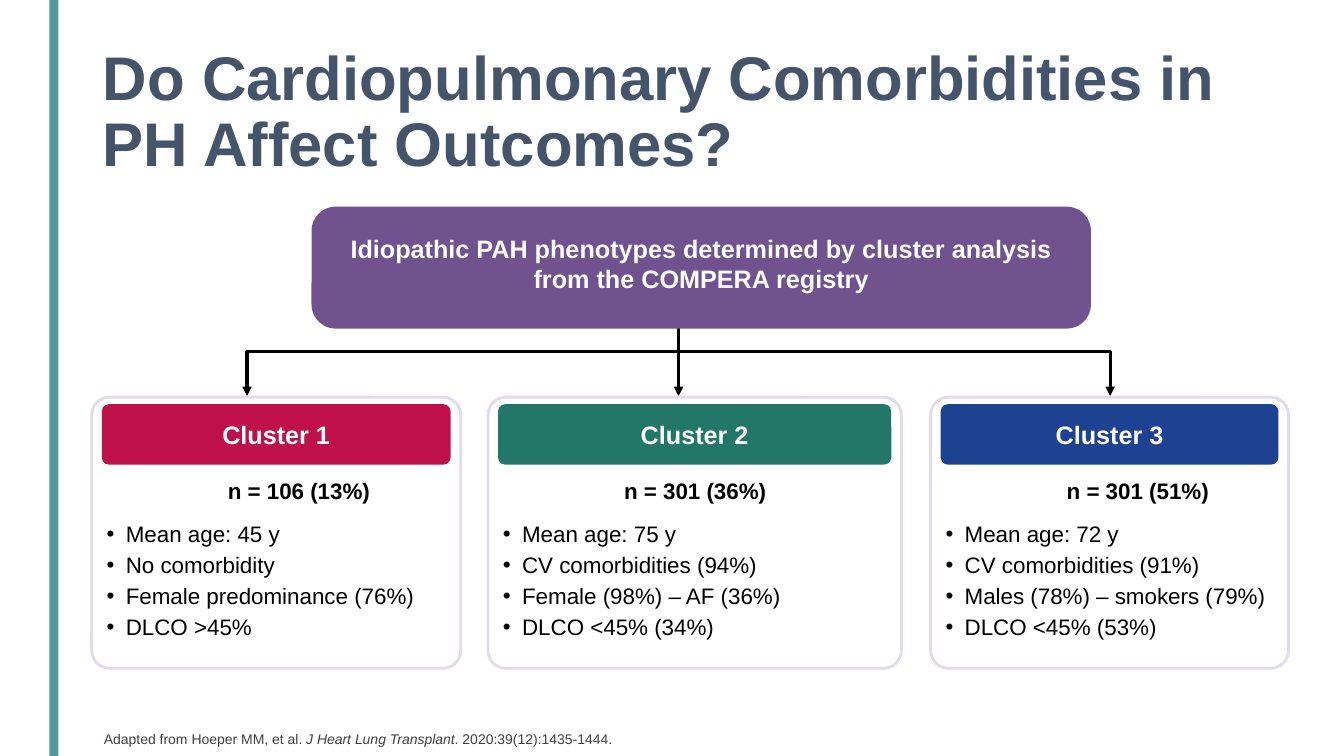
from lxml import etree
from pptx import Presentation
from pptx.dml.color import RGBColor
from pptx.enum.shapes import MSO_CONNECTOR, MSO_SHAPE
from pptx.enum.text import MSO_ANCHOR, MSO_AUTO_SIZE, PP_ALIGN
from pptx.oxml.ns import qn
from pptx.util import Inches, Pt

RECT, ROUND = MSO_SHAPE.RECTANGLE, MSO_SHAPE.ROUNDED_RECTANGLE
LINE, ELBOW = MSO_CONNECTOR.STRAIGHT, MSO_CONNECTOR.ELBOW
TOP, MIDDLE = MSO_ANCHOR.TOP, MSO_ANCHOR.MIDDLE
LEFT, CENTER = PP_ALIGN.LEFT, PP_ALIGN.CENTER

COLORS = {
    "bar": "549897", "title": "44546A", "note": "404040", "purple": "70528F",
    "red": "BF104B", "green": "227768", "blue": "1D4292",
    "edge": "E2DBEA", "white": "FFFFFF", "black": "000000",
}


def rgb(name):
    return RGBColor.from_string(COLORS[name])


def style(item, size, color, bold=False):
    font = item.font
    values = {"name": "Arial", "size": Pt(size), "bold": bold}
    for key, value in values.items():
        setattr(font, key, value)
    font.color.rgb = rgb(color)


deck = Presentation()
deck.slide_width, deck.slide_height = Inches(13.33), Inches(7.5)
slide = deck.slides.add_slide(deck.slide_layouts[1])
shapes = slide.shapes

# Title and source note
title, note = shapes.title, slide.placeholders[1]
places = [(title, 0.92, 0.4, 11.5, 1.45, MIDDLE), (note, 0.93, 7.22, 11.5, 0.28, TOP)]
for holder, x, y, w, h, anchor in places:
    holder.left, holder.top = Inches(x), Inches(y)
    holder.width, holder.height = Inches(w), Inches(h)
    frame = holder.text_frame
    frame.word_wrap = True
    frame.auto_size = MSO_AUTO_SIZE.NONE
    frame.vertical_anchor = anchor
    para = frame.paragraphs[0]
    para.alignment, para.line_spacing, para.space_before = LEFT, 0.9, Pt(0)

run = title.text_frame.paragraphs[0].add_run()
run.text = "Do Cardiopulmonary Comorbidities in PH Affect Outcomes?"
style(run, 44, "title", True)

para = note.text_frame.paragraphs[0]
props = para._p.get_or_add_pPr()
props.set("marL", "0")
props.set("indent", "0")
etree.SubElement(props, qn("a:buNone"))
parts = ["Adapted from Hoeper MM, et al. ", "J Heart Lung Transplant", ". 2020:39(12):1435-1444."]
for i, part in enumerate(parts):
    run = para.add_run()
    run.text = part
    style(run, 10, "note")
    run.font.italic = i == 1

# Arrows from the registry box to the clusters
span, drop = 4.28, 0.88
mid, start = 6.73, 3.05
arrows = [shapes.add_connector(LINE, Inches(mid), Inches(3.39), Inches(mid), Inches(3.93))]
for side, turn in [(-1, 90), (1, 270)]:
    # An elbow is laid out sideways, then turned to leave downwards
    x = mid + side * span / 2
    y = start + drop / 2
    arrow = shapes.add_connector(
        ELBOW, Inches(x + side * drop / 2), Inches(y - span / 2),
        Inches(x - side * drop / 2), Inches(y + span / 2))
    arrow.rotation = turn
    arrows.append(arrow)
for arrow in arrows:
    arrow.line.color.rgb = rgb("black")
    arrow.line.width = Pt(2.25)
    etree.SubElement(arrow.line._get_or_add_ln(), qn("a:tailEnd"), type="triangle")
    etree.SubElement(arrow._element.spPr, qn("a:effectLst"))

# Side bar, registry box, cards and headers: kind, place, corner, fill, edge, text
blocks = [
    (RECT, (0.49, 0, 0.09, 7.5), None, "bar", None, ""),
    (ROUND, (3.09, 2.05, 7.73, 1.21), 0.199, "purple", None,
     "Idiopathic PAH phenotypes determined by cluster analysis from the COMPERA registry"),
]
clusters = [
    (0.91, 3.66, "red", "n = 106 (13%)",
     ["Mean age: 45 y", "No comorbidity", "Female predominance (76%)", "DLCO >45%"]),
    (4.84, 4.1, "green", "n = 301 (36%)",
     ["Mean age: 75 y", "CV comorbidities (94%)", "Female (98%) – AF (36%)", "DLCO <45% (34%)"]),
    (9.23, 3.55, "blue", "n = 301 (51%)",
     ["Mean age: 72 y", "CV comorbidities (91%)", "Males (78%) – smokers (79%)", "DLCO <45% (53%)"]),
]
for i, (x, w, color, count, facts) in enumerate(clusters, 1):
    blocks.append((ROUND, (x, 3.94, w, 2.69), 0.066, "white", "edge", ""))
    blocks.append((ROUND, (x + 0.1, 4.01, w - 0.2, 0.6), 0.119, color, None, f"Cluster {i}"))

for kind, place, corner, fill, edge, text in blocks:
    block = shapes.add_shape(kind, *map(Inches, place))
    block.shadow.inherit = False
    block.fill.solid()
    block.fill.fore_color.rgb = rgb(fill)
    if corner:
        block.adjustments[0] = corner
    if edge:
        block.line.color.rgb = rgb(edge)
        block.line.width = Pt(2)
    else:
        block.line.fill.background()
    if text:
        frame = block.text_frame
        frame.word_wrap = True
        frame.vertical_anchor = MIDDLE
        if fill == "purple":
            frame.vertical_anchor = TOP
            frame.margin_top = Inches(0.19)
        para = frame.paragraphs[0]
        para.alignment = CENTER
        run = para.add_run()
        run.text = text
        style(run, 18, "white", True)

# Patient counts and facts
for x, w, color, count, facts in clusters:
    box = shapes.add_textbox(Inches(x + 0.14), Inches(4.68), Inches(3.83), Inches(0.37))
    box.text_frame.word_wrap = True
    para = box.text_frame.paragraphs[0]
    para.text, para.alignment = count, CENTER
    style(para, 16, "black", True)

    box = shapes.add_textbox(Inches(x + 0.05), Inches(5.11), Inches(4), Inches(1.3))
    frame = box.text_frame
    frame.word_wrap = True
    for i, fact in enumerate(facts):
        para = frame.add_paragraph() if i else frame.paragraphs[0]
        para.text = fact
        props = para._p.get_or_add_pPr()
        props.set("marL", str(Inches(0.19)))
        props.set("indent", str(-Inches(0.19)))
        etree.SubElement(props, qn("a:buFont"), typeface="Arial")
        etree.SubElement(props, qn("a:buChar"), char="•")
        para.space_before = Pt(3 if i else 0)
        style(para, 16, "black")

deck.save("out.pptx")
